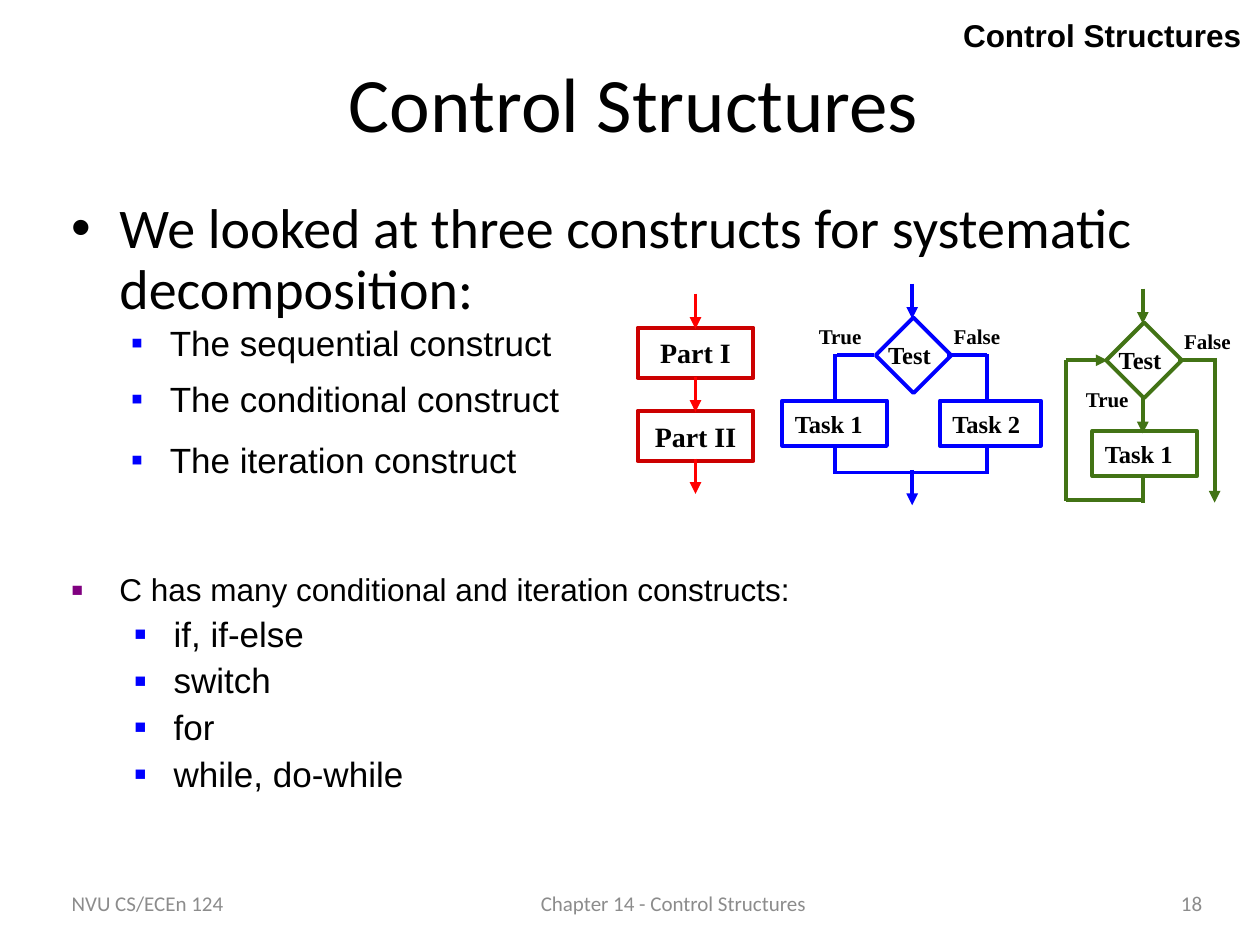
from lxml import etree
from pptx import Presentation
from pptx import util as u
from pptx.dml.color import RGBColor
from pptx.enum import shapes, text
from pptx.oxml.ns import qn

PX = 9144
COLORS = {"ink": "000000", "footer": "8C8C8C", "blue": "0000FF", "green": "427315",
          "dark_red": "CC0000", "red": "FF0000", "purple": "800080"}
LEFT, CENTER, RIGHT = text.PP_ALIGN.LEFT, text.PP_ALIGN.CENTER, text.PP_ALIGN.RIGHT
TOP, MIDDLE = text.MSO_ANCHOR.TOP, text.MSO_ANCHOR.MIDDLE
LABEL = {"name": "Times New Roman", "size": u.Pt(14), "bold": True}
BRANCH = {**LABEL, "size": u.Pt(12)}
PART = {**LABEL, "size": u.Pt(16)}
FOOTER = {"name": "Calibri", "size": u.Pt(12)}
LEAD = {"name": "Calibri", "size": u.Pt(32)}
POINT = {"name": "Arial", "size": u.Pt(18)}
ITEM = {"name": "Arial", "size": u.Pt(20)}


def px(*lengths):
    """Turn px lengths into EMU."""
    return [u.Emu(length * PX) for length in lengths]


def rgb(color):
    """Look up a colour by name."""
    return RGBColor.from_string(COLORS[color])


def apply(target, formats):
    """Set each format value on the target."""
    for name, value in formats.items():
        setattr(target, name, value)


def write(paragraph, words, font, color="ink", **formats):
    """Write one formatted run into a paragraph."""
    run = paragraph.add_run()
    run.text = words
    apply(run.font, font)
    run.font.color.rgb = rgb(color)
    apply(paragraph, formats)


def add_bullet(paragraph, symbol, color, margin, hang, percent=100):
    """Give a paragraph a coloured bullet and a hanging indent."""
    properties = paragraph._p.get_or_add_pPr()
    properties.set("marL", str(margin * PX))
    properties.set("indent", str(-hang * PX))
    tint = etree.SubElement(properties, qn("a:buClr"))
    etree.SubElement(tint, qn("a:srgbClr"), val=COLORS[color])
    etree.SubElement(properties, qn("a:buSzPct"), val=str(percent * 1000))
    etree.SubElement(properties, qn("a:buFont"), typeface="Arial")
    etree.SubElement(properties, qn("a:buChar"), char=symbol)


def add_frame(parent, box, anchor=TOP):
    """Add an empty wrapping text box and return its frame."""
    frame = parent.add_textbox(*px(*box)).text_frame
    apply(frame, {"word_wrap": True, "vertical_anchor": anchor})
    return frame


def add_label(parent, box, words, font, color="ink", align=LEFT):
    """Add a single line of text."""
    frame = add_frame(parent, box, MIDDLE)
    write(frame.paragraphs[0], words, font, color, alignment=align)


def add_step(parent, box, color, words="", font=LABEL, align=LEFT,
             kind=shapes.MSO_SHAPE.RECTANGLE):
    """Add an outlined flowchart step."""
    step = parent.add_shape(kind, *px(*box))
    step.shadow.inherit = False
    step.fill.background()
    step.line.color.rgb = rgb(color)
    step.line.width = u.Pt(2.25)
    apply(step.text_frame, {"word_wrap": True, "vertical_anchor": MIDDLE})
    if words:
        write(step.text_frame.paragraphs[0], words, font, alignment=align)


def add_flow(parent, ends, color, arrow=False):
    """Add a straight flow line, with an arrowhead if asked."""
    flow = parent.add_connector(shapes.MSO_CONNECTOR.STRAIGHT, *px(*ends))
    flow.line.color.rgb = rgb(color)
    flow.line.width = u.Pt(2.25)
    if arrow:
        etree.SubElement(flow.line._get_or_add_ln(), qn("a:tailEnd"), type="triangle")
    etree.SubElement(flow._element.spPr, qn("a:effectLst"))


def add_down_arrow(parent, x, y, color):
    """Add a short downward arrow."""
    add_flow(parent, (x, y, x, y + 28), color, arrow=True)


def add_test(parent, x, y, color):
    """Add a test diamond with its entry arrow and False branch."""
    add_step(parent, (x, y, 60, 60), color, kind=shapes.MSO_SHAPE.DIAMOND)
    add_label(parent, (x, y + 13, 72, 33), "Test", LABEL)
    add_label(parent, (x + 52, y, 60, 30), "False", BRANCH)
    add_down_arrow(parent, x + 29, y - 27, color)
    add_flow(parent, (x + 88, y + 30, x + 57, y + 30), color)


def add_construct(parent, y, words):
    """Add the bullet that names a construct."""
    point = add_frame(parent, (44, y, 930, 58)).paragraphs[0]
    write(point, words, ITEM, level=1)
    add_bullet(point, "▪", "blue", 81, 31)


def add_conditional(parent):
    """Draw the conditional construct."""
    add_test(parent, 695, 252, "blue")
    add_label(parent, (640, 252, 56, 30), "True", BRANCH)
    add_step(parent, (621, 318, 83, 36), "blue", "Task 1")
    add_step(parent, (746, 318, 80, 36), "blue", "Task 2")
    add_flow(parent, (694, 282, 664, 282), "blue")
    for x in (663, 783):
        add_flow(parent, (x, 281, x, 318), "blue")
        add_flow(parent, (x, 354, x, 376), "blue")
    add_flow(parent, (783, 375, 663, 375), "blue")
    add_down_arrow(parent, 724, 373, "blue")
    add_construct(parent, 295, "The conditional construct")


def add_iteration(parent):
    """Draw the iteration construct."""
    add_test(parent, 878, 256, "green")
    add_label(parent, (852, 302, 56, 30), "True", BRANCH)
    add_step(parent, (867, 342, 83, 36), "green", "Task 1")
    add_down_arrow(parent, 907, 316, "green")
    for ends in ((846, 286, 846, 398), (907, 377, 907, 399), (846, 397, 907, 397)):
        add_flow(parent, ends, "green")
    for ends in ((846, 286, 879, 286), (964, 284, 964, 399)):
        add_flow(parent, ends, "green", arrow=True)
    add_construct(parent, 343, "The iteration construct")


def add_sequential(parent):
    """Draw the sequential construct."""
    for y, words in ((260, "Part I"), (326, "Part II")):
        add_step(parent, (506, y, 92, 40), "dark_red", words, PART, CENTER)
    for y in (233, 299, 364):
        add_down_arrow(parent, 552, y, "red")
    add_construct(parent, 250, "The sequential construct")


def add_title(slide):
    """Place and format the slide title."""
    title = slide.shapes.title
    apply(title, dict(zip(("left", "top", "width", "height"), px(77, 33, 852, 95))))
    title.text_frame.vertical_anchor = MIDDLE
    write(title.text_frame.paragraphs[0], "Control Structures",
          {"name": "Calibri", "size": u.Pt(44)}, alignment=CENTER)


def add_lead(parent):
    """Add the opening statement."""
    lead = add_frame(parent, (47, 154, 893, 103)).paragraphs[0]
    write(lead, "We looked at three constructs for systematic decomposition:",
          LEAD, line_spacing=0.9)
    add_bullet(lead, "•", "ink", 38, 38)


def add_c_constructs(parent):
    """List the constructs of C."""
    frame = add_frame(parent, (47, 451, 893, 215))
    heading = frame.paragraphs[0]
    write(heading, "C has many conditional and iteration constructs:", POINT,
          line_spacing=0.9)
    add_bullet(heading, "■", "purple", 38, 38, 60)
    for words in ("if, if-else", "switch", "for", "while, do-while"):
        item = frame.add_paragraph()
        write(item, words, ITEM, level=1, line_spacing=0.9, space_before=u.Pt(5))
        add_bullet(item, "■", "blue", 81, 31, 55)


def main():
    """Build the slide and save it."""
    deck = Presentation()
    deck.slide_width, deck.slide_height = px(1000, 750)
    slide = deck.slides.add_slide(deck.slide_layouts[5])
    for x, width, words, align in ((47, 208, "NVU CS/ECEn 124", LEFT),
                                   (278, 513, "Chapter 14 - Control Structures", CENTER),
                                   (756, 208, "18", RIGHT)):
        add_label(slide.shapes, (x, 692, width, 50), words, FOOTER, "footer", align)
    add_title(slide)
    add_lead(slide.shapes)
    for add_diagram in (add_conditional, add_iteration, add_sequential):
        add_diagram(slide.shapes.add_group_shape().shapes)
    add_c_constructs(slide.shapes)
    add_label(slide.shapes, (593, 8, 402, 40), "Control Structures",
              {**POINT, "bold": True}, align=RIGHT)
    deck.save("out.pptx")


if __name__ == "__main__":
    main()
